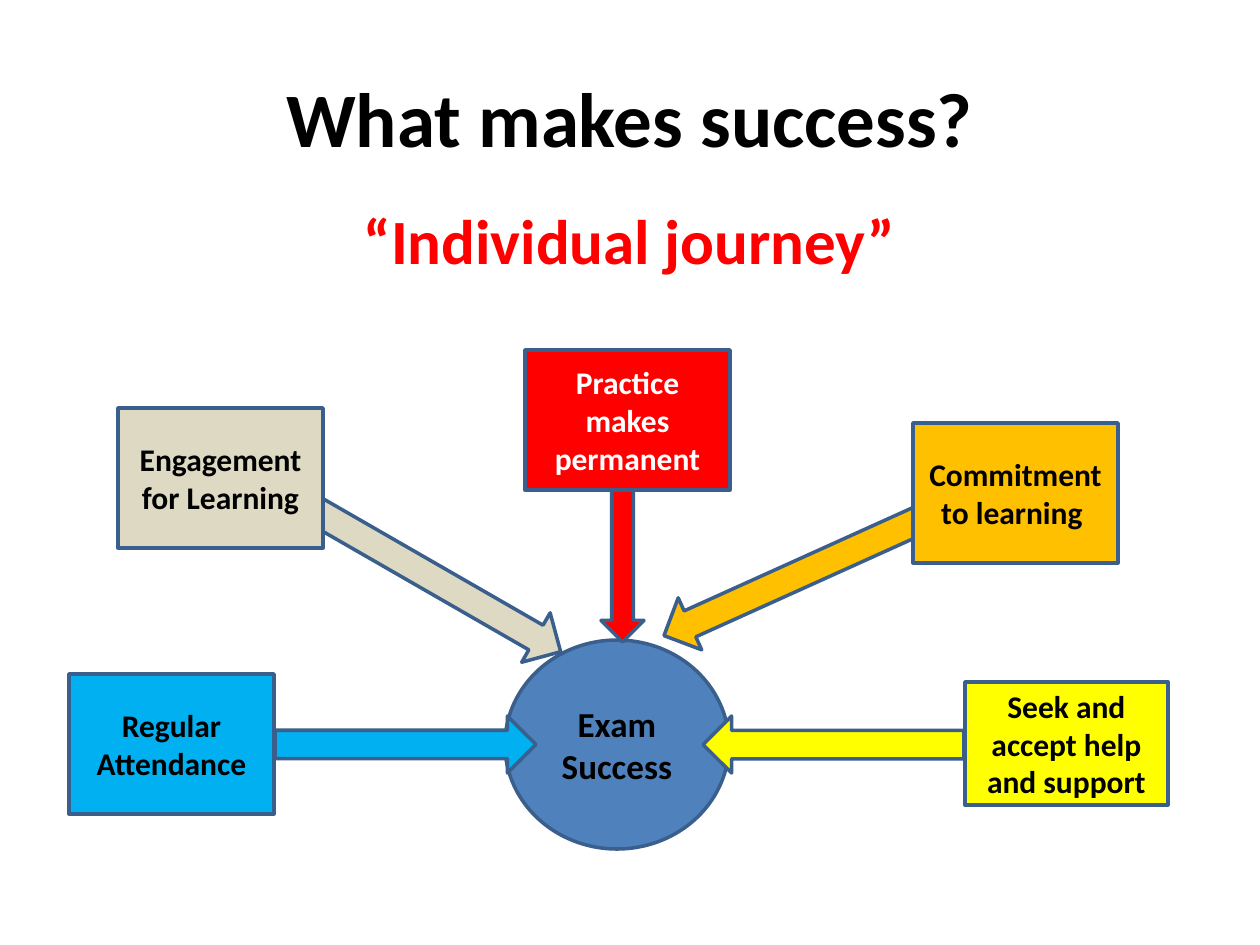
import pptx
import pptx.util
import pptx.dml.color
import pptx.enum.shapes
import pptx.enum.text

SCALE = 914400 / 126
HUES = {
    "black": "000000", "white": "FFFFFF", "red": "FF0000",
    "blue": "4F81BD", "edge": "3A5F8C", "sky": "00B0F0",
    "gold": "FFC000", "sun": "FFFF00", "sand": "DDD9C3",
}
KIND = pptx.enum.shapes.MSO_SHAPE
MID = pptx.enum.text.MSO_ANCHOR.MIDDLE

deck = pptx.Presentation()
deck.slide_width = round(1260 * SCALE)
deck.slide_height = round(945 * SCALE)
slide = deck.slides.add_slide(deck.slide_layouts[5])


def write(shape, lines, size, hue):
    frame = shape.text_frame
    frame.word_wrap = True
    for i, line in enumerate(lines):
        para = frame.add_paragraph() if i else frame.paragraphs[0]
        para.alignment = pptx.enum.text.PP_ALIGN.CENTER
        run = para.add_run()
        run.text = line
        run.font.name = "Calibri"
        run.font.size = pptx.util.Pt(size)
        run.font.bold = True
        run.font.color.rgb = pptx.dml.color.RGBColor.from_string(HUES[hue])


def draw(kind, box, hue, turn=0):
    shape = slide.shapes.add_shape(kind, *[round(n * SCALE) for n in box])
    shape.shadow.inherit = False
    shape.rotation = turn
    shape.fill.solid()
    shape.fill.fore_color.rgb = pptx.dml.color.RGBColor.from_string(HUES[hue])
    shape.line.color.rgb = pptx.dml.color.RGBColor.from_string(HUES["edge"])
    shape.line.width = pptx.util.Pt(2)
    shape.text_frame.vertical_anchor = MID
    return shape


title = slide.shapes.title
title.left, title.top, title.width, title.height = [
    round(n * SCALE) for n in (63, 38, 1134, 158)]
title.text_frame.vertical_anchor = MID
write(title, ["What makes success?"], 44, "black")

goal = draw(KIND.OVAL, (505, 640, 224, 209), "blue")
write(goal, ["Exam", "Success"], 20, "black")

parts = [
    ("Seek and accept help and support", (965, 682, 203, 123),
     (703, 716, 261, 57), 180, "sun", "black"),
    ("Commitment to learning ", (913, 423, 205, 140),
     (651, 547, 292, 57), 155.7, "gold", "black"),
    ("Regular Attendance", (69, 674, 205, 140),
     (275, 716, 261, 57), 0, "sky", "black"),
    ("Engagement for Learning", (118, 408, 205, 140),
     (290, 551, 290, 57), 29.9, "sand", "black"),
    ("Practice makes permanent", (525, 350, 205, 140),
     (532, 530, 181, 43), 90, "red", "white"),
]
for text, box, arrow, turn, hue, ink in parts:
    draw(KIND.RIGHT_ARROW, arrow, hue, turn)
    write(draw(KIND.RECTANGLE, box, hue), [text], 18, ink)

quote = slide.shapes.add_textbox(
    *[round(n * SCALE) for n in (222, 195, 815, 89)])
write(quote, ["“Individual journey”"], 36, "red")

deck.save("out.pptx")
